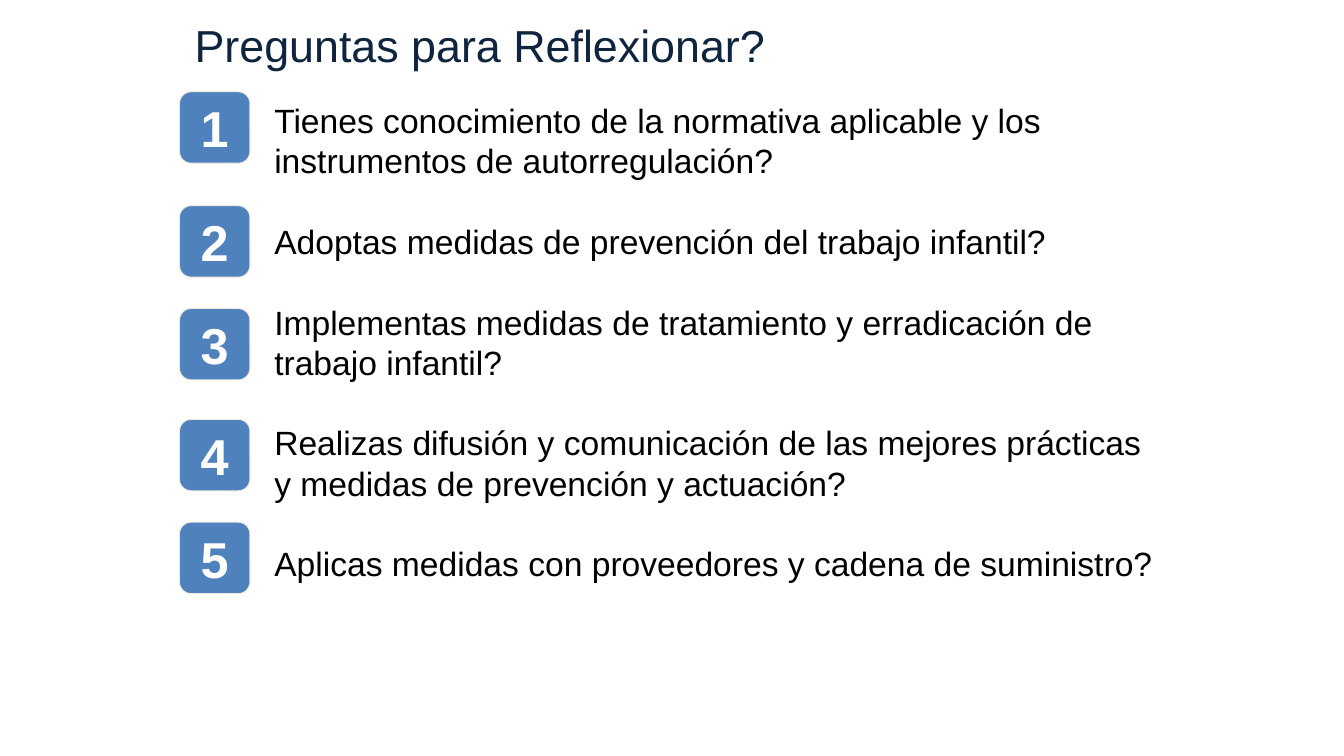
from lxml.etree import SubElement
from pptx import Presentation
from pptx.dml.color import RGBColor
from pptx.enum.shapes import MSO_SHAPE as Shape
from pptx.enum.text import MSO_ANCHOR as Anchor, MSO_AUTO_SIZE as Fit, PP_ALIGN as Align
from pptx.oxml.ns import qn
from pptx.util import Inches, Pt

NAVY = RGBColor(0x0F, 0x24, 0x3E)
BLUE = RGBColor(0x4F, 0x81, 0xBD)
CREAM = RGBColor(0xEE, 0xEC, 0xE1)
WHITE = RGBColor(0xFF, 0xFF, 0xFF)
BLACK = RGBColor(0, 0, 0)

LINE = Pt(28.8)
ASKS = [
    "Tienes conocimiento de la normativa aplicable y los instrumentos de autorregulación?",
    "Adoptas medidas de prevención del trabajo infantil?",
    "Implementas medidas de tratamiento y erradicación de trabajo infantil?",
    "Realizas difusión y comunicación de las mejores prácticas y medidas de prevención y actuación?",
    "Aplicas medidas con proveedores y cadena de suministro?",
]
DROPS = [0, 1.13, 2.15, 3.25, 4.27]  # badge tops below the first badge


def place(shape, left, top, width, height):
    shape.left, shape.top = Inches(left), Inches(top)
    shape.width, shape.height = Inches(width), Inches(height)


def write(par, text, size, color, bold=False):
    run = par.add_run()
    run.text = text
    font = run.font
    font.name, font.size, font.bold = "Arial", Pt(size), bold
    font.color.rgb = color


def add_title(slide, left, top, width, height):
    title = slide.shapes.title
    place(title, left, top, width, height)
    frame = title.text_frame
    frame.auto_size = Fit.NONE
    frame.vertical_anchor = Anchor.TOP
    frame.margin_left = Inches(0.22)
    par = frame.paragraphs[0]
    par.alignment = Align.LEFT
    write(par, "Preguntas para Reflexionar?", 32, NAVY)


def add_asks(slide, left, top, width, height):
    body = slide.placeholders[1]
    place(body, left, top, width, height)
    frame = body.text_frame
    frame.auto_size = Fit.NONE
    for i, ask in enumerate(ASKS):
        par = frame.add_paragraph() if i else frame.paragraphs[0]
        props = par._p.get_or_add_pPr()
        props.set("marL", "0")
        props.set("indent", "0")
        SubElement(props, qn("a:buNone"))
        par.line_spacing = LINE
        par.space_before = LINE if i else Pt(0)
        write(par, ask, 24, BLACK)


def add_badge(slide, num, left, top, width, height):
    badge = slide.shapes.add_shape(Shape.ROUNDED_RECTANGLE, 0, 0, 0, 0)
    place(badge, left, top, width, height)
    badge.shadow.inherit = False
    badge.fill.solid()
    badge.fill.fore_color.rgb = BLUE
    badge.line.color.rgb = CREAM
    badge.line.width = Pt(0.75)
    frame = badge.text_frame
    frame.margin_left = frame.margin_right = 0
    frame.margin_top = frame.margin_bottom = 0
    frame.word_wrap = False
    frame.vertical_anchor = Anchor.MIDDLE
    par = frame.paragraphs[0]
    par.alignment = Align.CENTER
    write(par, str(num), 36, WHITE, bold=True)


def add_list(slide, left, top):
    add_asks(slide, left + 0.84, top + 0.03, 9.05, 4.95)
    for num, drop in enumerate(DROPS, 1):
        add_badge(slide, num, left, top + drop, 0.7, 0.71)


def main():
    deck = Presentation()
    deck.slide_width, deck.slide_height = Inches(13.33), Inches(7.5)
    slide = deck.slides.add_slide(deck.slide_layouts[1])
    add_title(slide, 1.71, 0.13, 6.61, 0.64)
    add_list(slide, 1.78, 0.91)
    deck.save("out.pptx")


if __name__ == "__main__":
    main()
